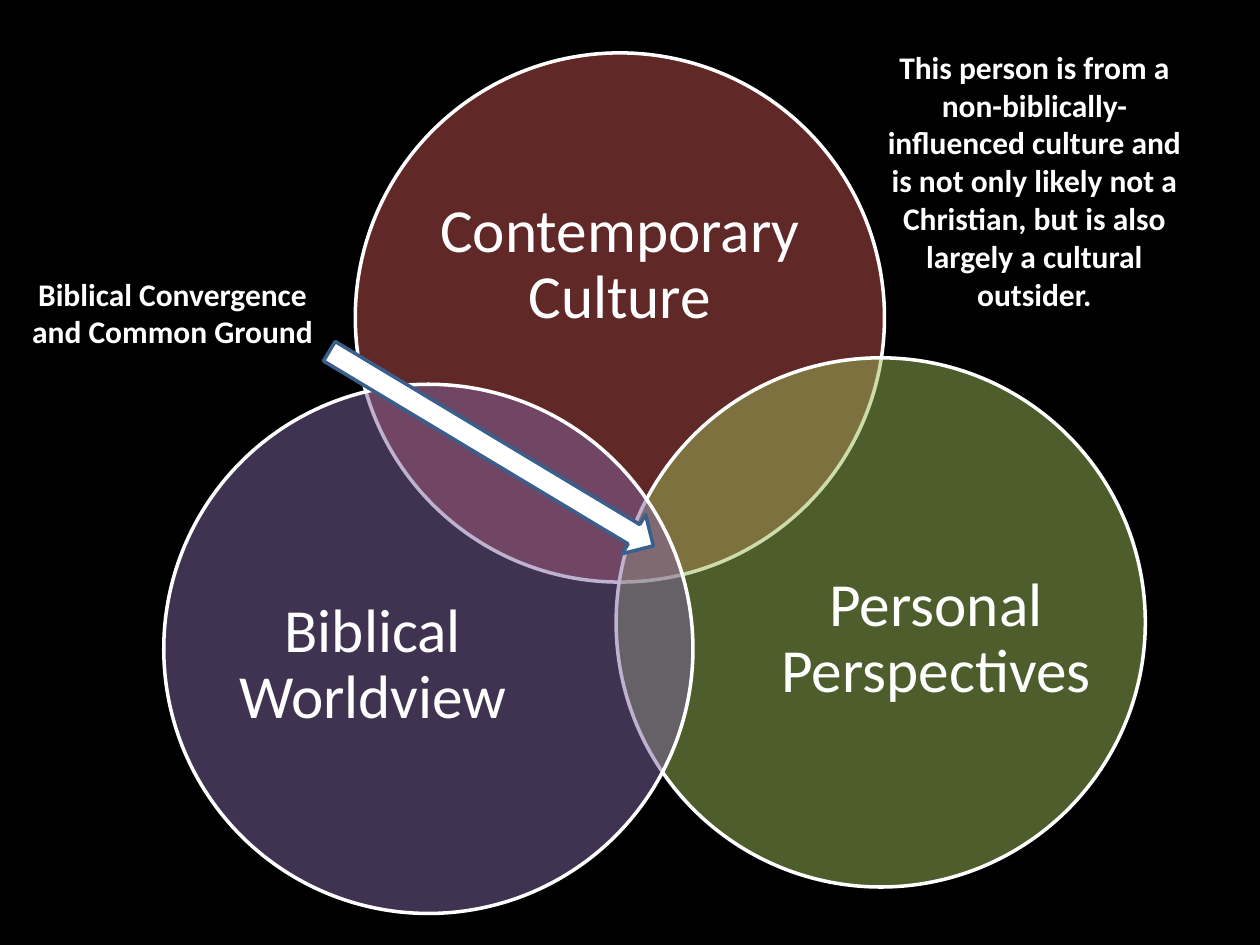
"""Build a three-circle Venn slide on worldview, culture and perspectives."""
from lxml.etree import SubElement
from pptx import Presentation
from pptx.dml.color import RGBColor
from pptx.enum.shapes import MSO_SHAPE as SHAPE
from pptx.enum.text import MSO_ANCHOR as ANCHOR, MSO_AUTO_SIZE as AUTO, PP_ALIGN as ALIGN
from pptx.oxml.ns import qn
from pptx.util import Inches, Pt

WIDTH, HEIGHT = 10, 7.5
DIAMETER = 4.2
FONT, WHITE, BLACK, BLUE = "Calibri", "FFFFFF", "000000", "3A5F8C"

CIRCLES = [
    ("Contemporary Culture", "C0504D", (2.82, 0.42), (3.38, 1.16, 3.08, 1.89)),
    ("Personal Perspectives", "9BBB59", (4.89, 2.84), (6.17, 3.92, 2.52, 2.31)),
    ("Biblical Worldview", "8064A2", (1.3, 3.05), (1.7, 4.13, 2.52, 2.31)),
]
CONVERGENCE = ("Biblical Convergence and Common Ground", (0.08, 2.13, 2.58, 0.71))
OUTSIDER = (
    "This person is from a non-biblically-influenced culture and is not only "
    "likely not a Christian, but is also largely a cultural outsider.",
    (6.92, 0.33, 2.58, 2.22),
)
ARROW_BOX, ARROW_TURN = (3.72, 2.06, 0.36, 3), 301


def rgb(color):
    return RGBColor.from_string(color)


def add_shape(shapes, kind, box, fill, line, alpha=None):
    sp = shapes.add_shape(kind, *map(Inches, box))
    sp.shadow.inherit = False
    sp.fill.solid()
    sp.fill.fore_color.rgb = rgb(fill)
    sp.line.color.rgb = rgb(line)
    sp.line.width = Pt(2)
    if alpha is not None:
        clr = sp._element.spPr.find(qn("a:solidFill"))[0]
        SubElement(clr, qn("a:alpha"), val=str(alpha * 1000))
    return sp


def add_text(shapes, text, box, size, bold=False):
    tb = shapes.add_textbox(*map(Inches, box))
    tf = tb.text_frame
    tf.word_wrap = True
    p = tf.paragraphs[0]
    p.alignment = ALIGN.CENTER
    r = p.add_run()
    r.text = text
    r.font.name, r.font.size, r.font.bold = FONT, Pt(size), bold
    r.font.color.rgb = rgb(WHITE)
    return tf


def add_circle(shapes, text, fill, corner, text_box):
    add_shape(shapes, SHAPE.OVAL, (*corner, DIAMETER, DIAMETER), fill, WHITE, alpha=50)
    tf = add_text(shapes, text, text_box, 35)
    tf.margin_left = tf.margin_right = tf.margin_top = tf.margin_bottom = 0
    tf.vertical_anchor = ANCHOR.MIDDLE
    tf.paragraphs[0].line_spacing = 0.9


def add_note(shapes, text, box):
    add_text(shapes, text, box, 18, bold=True).auto_size = AUTO.SHAPE_TO_FIT_TEXT


def main():
    prs = Presentation()
    prs.slide_width, prs.slide_height = Inches(WIDTH), Inches(HEIGHT)
    slide = prs.slides.add_slide(prs.slide_layouts[6])
    slide.background.fill.solid()
    slide.background.fill.fore_color.rgb = rgb(BLACK)

    venn = slide.shapes.add_group_shape()
    for circle in CIRCLES:
        add_circle(venn.shapes, *circle)
    add_note(slide.shapes, *CONVERGENCE)
    arrow = add_shape(slide.shapes, SHAPE.DOWN_ARROW, ARROW_BOX, WHITE, BLUE)
    arrow.rotation = ARROW_TURN
    add_note(slide.shapes, *OUTSIDER)
    prs.save("out.pptx")


if __name__ == "__main__":
    main()
